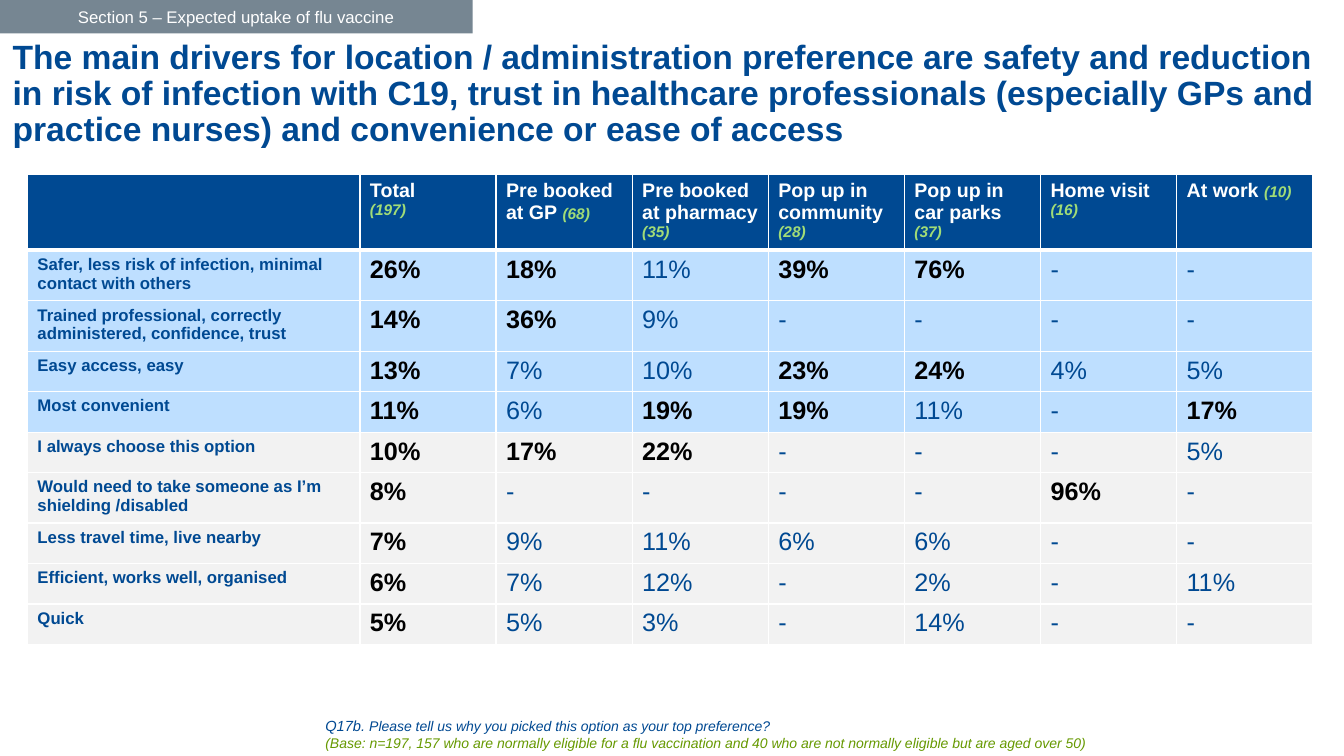
from lxml.etree import SubElement
from pptx import Presentation
from pptx.dml.color import RGBColor
from pptx.enum.shapes import MSO_SHAPE
from pptx.enum.text import MSO_ANCHOR, PP_ALIGN
from pptx.oxml.ns import qn
from pptx.util import Cm, Pt

COLOURS = {
    "navy": "004992", "white": "FFFFFF", "black": "000000", "slate": "768692",
    "mint": "A1DC77", "green": "669900", "sky": "BEDFFF", "grey": "F2F2F2",
}
FORMATS = {
    "title": {"size": Pt(24), "bold": True, "colour": "navy"},
    "section": {"size": Pt(12), "colour": "white"},
    "question": {"size": Pt(10.5), "italic": True, "colour": "navy"},
    "wording": {"size": Pt(10), "italic": True, "colour": "navy"},
    "base": {"size": Pt(10), "italic": True, "colour": "green"},
    "heading": {"size": Pt(14), "bold": True, "colour": "white"},
    "count": {"size": Pt(11), "bold": True, "italic": True, "colour": "mint"},
    "reason": {"size": Pt(12), "bold": True, "colour": "navy"},
    "strong": {"size": Pt(18), "bold": True, "colour": "black"},
    "normal": {"size": Pt(18), "bold": False, "colour": "navy"},
}
TITLE = ("The main drivers for location / administration preference are safety and "
         "reduction in risk of infection with C19, trust in healthcare professionals "
         "(especially GPs and practice nurses) and convenience or ease of access")
BASE = ("(Base: n=197, 157 who are normally eligible for a flu vaccination and 40 who "
        "are not normally eligible but are aged over 50)")
OPTIONS = [
    ("Pre booked at GP", 68), ("Pre booked at pharmacy", 35),
    ("Pop up in community", 28), ("Pop up in car parks", 37),
    ("Home visit", 16), ("At work", 10),
]
REASONS = [
    ("Safer, less risk of infection, minimal contact with others", [26, 18, 11, 39, 76, 0, 0]),
    ("Trained professional, correctly administered, confidence, trust", [14, 36, 9, 0, 0, 0, 0]),
    ("Easy access, easy", [13, 7, 10, 23, 24, 4, 5]),
    ("Most convenient", [11, 6, 19, 19, 11, 0, 17]),
    ("I always choose this option", [10, 17, 22, 0, 0, 0, 5]),
    ("Would need to take someone as I’m shielding /disabled", [8, 0, 0, 0, 0, 96, 0]),
    ("Less travel time, live nearby", [7, 9, 11, 6, 6, 0, 0]),
    ("Efficient, works well, organised", [6, 7, 12, 0, 2, 0, 11]),
    ("Quick", [5, 5, 3, 0, 14, 0, 0]),
]
TOP_REASONS = 4
STRONG_FROM = 17
TWO_LINE_LENGTH = 40


class SurveySlide:
    font_name = "Arial"

    def __init__(self, presentation):
        self.slide = presentation.slides.add_slide(presentation.slide_layouts[6])

    def colour(self, name):
        return RGBColor.from_string(COLOURS[name])

    def fill(self, target, name):
        target.fill.solid()
        target.fill.fore_color.rgb = self.colour(name)

    def add_paragraphs(self, frame, paragraphs):
        for index, runs in enumerate(paragraphs):
            paragraph = frame.paragraphs[0] if index == 0 else frame.add_paragraph()
            for text, style in runs:
                run = paragraph.add_run()
                run.text = text
                run.font.name = self.font_name
                for attribute, value in FORMATS[style].items():
                    if attribute == "colour":
                        run.font.color.rgb = self.colour(value)
                    else:
                        setattr(run.font, attribute, value)

    def text(self, box, paragraphs, side_margin=0.25, line_spacing=None):
        frame = self.slide.shapes.add_textbox(*map(Cm, box)).text_frame
        settings = {"word_wrap": True, "margin_left": Cm(side_margin),
                    "margin_right": Cm(side_margin)}
        for attribute, value in settings.items():
            setattr(frame, attribute, value)
        self.add_paragraphs(frame, paragraphs)
        for paragraph in frame.paragraphs:
            paragraph.line_spacing = line_spacing

    def banner(self, box, text, style, fill):
        shape = self.slide.shapes.add_shape(MSO_SHAPE.RECTANGLE, *map(Cm, box))
        shape.shadow.inherit = False
        shape.line.fill.background()
        self.fill(shape, fill)
        shape.text_frame.vertical_anchor = MSO_ANCHOR.MIDDLE
        self.add_paragraphs(shape.text_frame, [[(text, style)]])
        shape.text_frame.paragraphs[0].alignment = PP_ALIGN.CENTER

    def cell(self, cell, paragraphs, fill, top=1, bottom=1):
        self.add_paragraphs(cell.text_frame, paragraphs)
        properties = cell._tc.get_or_add_tcPr()
        for side, width in {"lnL": 1, "lnR": 1, "lnT": top, "lnB": bottom}.items():
            line = SubElement(properties, qn(f"a:{side}"), w=str(Pt(width)))
            solid = SubElement(line, qn("a:solidFill"))
            SubElement(solid, qn("a:srgbClr"), val=COLOURS["white"])
        self.fill(cell, fill)

    def table(self, left, top, widths, heights):
        frame = self.slide.shapes.add_table(
            len(heights), len(widths), Cm(left), Cm(top), Cm(sum(widths)), Cm(sum(heights)))
        table = frame.table
        for column, width in zip(table.columns, widths):
            column.width = Cm(width)
        for row, height in zip(table.rows, heights):
            row.height = Cm(height)
        return table

    def reasons_table(self, left, top):
        heights = [1.9] + [1.27 if len(reason) > TWO_LINE_LENGTH else 1.02
                           for reason, _ in REASONS]
        table = self.table(left, top, [8.38] + [3.43] * 7, heights)
        headings = [[], [[("Total", "heading")], [("(197)", "count")]]]
        headings += [[[(f"{option} ", "heading"), (f"({count})", "count")]]
                     for option, count in OPTIONS]
        for column, paragraphs in enumerate(headings):
            self.cell(table.cell(0, column), paragraphs, "navy", bottom=3)
        for row, (reason, shares) in enumerate(REASONS, start=1):
            fill = "sky" if row <= TOP_REASONS else "grey"
            entries = [(reason, "reason")]
            for position, share in enumerate(shares):
                strong = position == 0 or share >= STRONG_FROM
                entries.append((f"{share}%" if share else "-",
                                "strong" if strong else "normal"))
            for column, entry in enumerate(entries):
                self.cell(table.cell(row, column), [[entry]], fill, top=3 if row == 1 else 1)


def main():
    presentation = Presentation()
    presentation.slide_width = Cm(33.87)
    presentation.slide_height = Cm(19.05)
    survey = SurveySlide(presentation)
    survey.text((-0.28, 0.89, 34.44, 3.02), [[(TITLE, "title")]],
                side_margin=0.6, line_spacing=0.9)
    survey.text((7.95, 17.93, 20.35, 1.14), [
        [("Q17b. ", "question"),
         ("Please tell us why you picked this option as your top preference?", "wording")],
        [(BASE, "base")],
    ])
    survey.reasons_table(0.69, 4.4)
    survey.banner((0, 0, 11.91, 0.84), "Section 5 – Expected uptake of flu vaccine",
                  "section", "slate")
    presentation.save("out.pptx")


if __name__ == "__main__":
    main()
